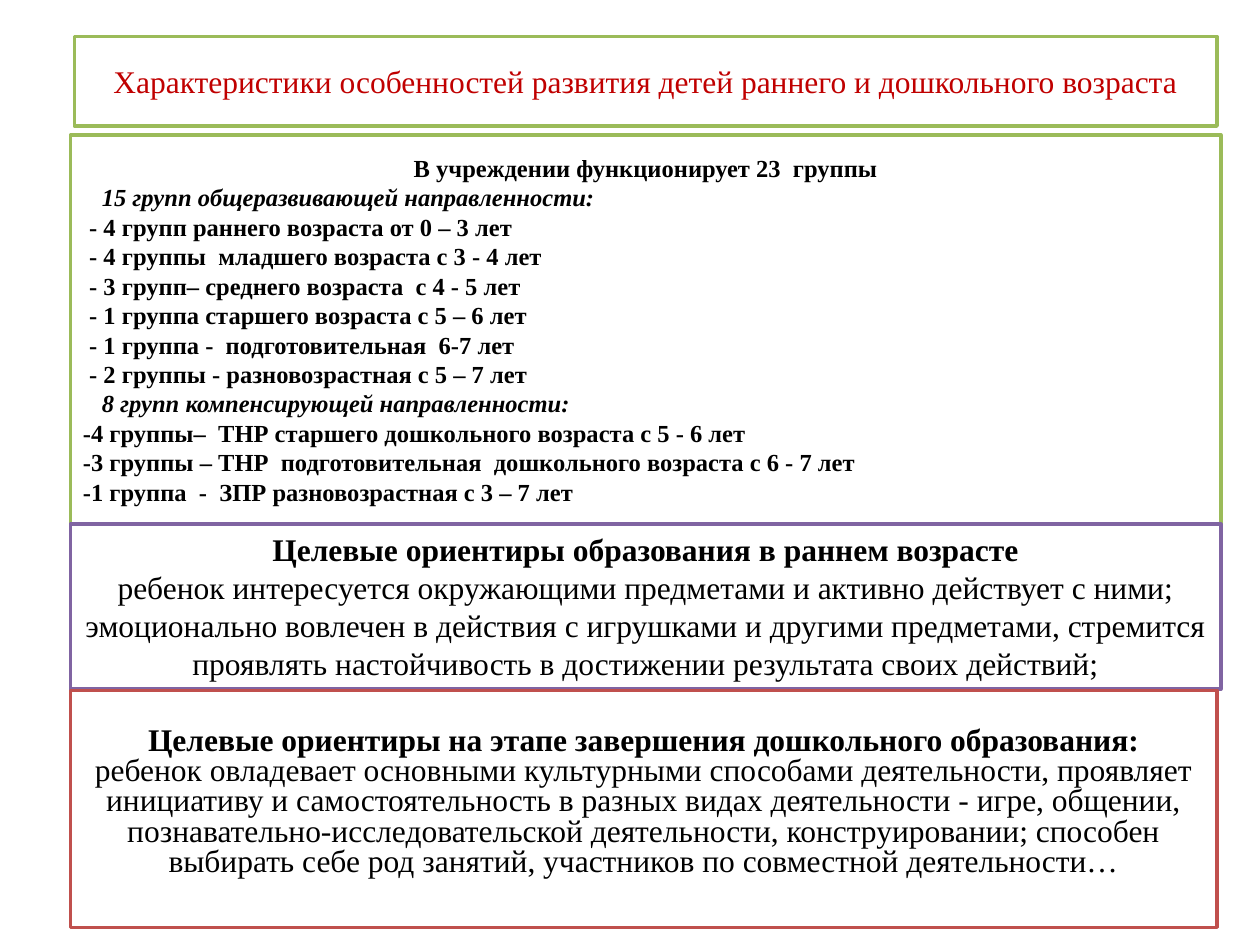
from dataclasses import dataclass

from pptx import Presentation
from pptx.dml.color import RGBColor
from pptx.enum.shapes import MSO_SHAPE
from pptx.enum.text import MSO_ANCHOR, PP_ALIGN
from pptx.util import Inches, Pt

RECTANGLE = MSO_SHAPE.RECTANGLE
TOP, MIDDLE = MSO_ANCHOR.TOP, MSO_ANCHOR.MIDDLE
LEFT, CENTER = PP_ALIGN.LEFT, PP_ALIGN.CENTER

SLIDE_W, SLIDE_H = 10, 7.5


@dataclass(frozen=True)
class Theme:
    font: str = "Times New Roman"
    paper: str = "FFFFFF"
    ink: str = "000000"
    title: str = "C00000"
    green: str = "9BBB59"
    purple: str = "8064A2"
    red: str = "C0504D"
    large: int = 18
    small: int = 14
    border: int = 2


THEME = Theme()

HEADING = "Характеристики особенностей развития детей раннего и дошкольного возраста"
GROUPS_TOTAL = "В учреждении функционирует 23  группы"
# Each section: heading, indent of its items in inches, items
GROUP_SECTIONS = [
    ("15 групп общеразвивающей направленности:", 0.05, [
        "- 4 групп раннего возраста от 0 – 3 лет",
        "- 4 группы  младшего возраста с 3 - 4 лет",
        "- 3 групп– среднего возраста  с 4 - 5 лет",
        "- 1 группа старшего возраста с 5 – 6 лет",
        "- 1 группа -  подготовительная  6-7 лет",
        "- 2 группы - разновозрастная с 5 – 7 лет",
    ]),
    ("8 групп компенсирующей направленности:", 0, [
        "-4 группы–  ТНР старшего дошкольного возраста с 5 - 6 лет",
        "-3 группы – ТНР  подготовительная  дошкольного возраста с 6 - 7 лет",
        "-1 группа  -  ЗПР разновозрастная с 3 – 7 лет",
    ]),
]
EARLY_AGE = (
    "Целевые ориентиры образования в раннем возрасте",
    "ребенок интересуется окружающими предметами и активно действует с ними; "
    "эмоционально вовлечен в действия с игрушками и другими предметами, "
    "стремится проявлять настойчивость в достижении результата своих действий;",
)
PRESCHOOL_END = (
    "Целевые ориентиры на этапе завершения дошкольного образования:",
    "ребенок овладевает основными культурными способами деятельности, "
    "проявляет инициативу и самостоятельность в разных видах деятельности - "
    "игре, общении, познавательно-исследовательской деятельности, "
    "конструировании; способен выбирать себе род занятий, участников по "
    "совместной деятельности…",
)


def add_panel(slide, box, border, anchor=MIDDLE):
    """Draw a bordered panel in box (left, top, width, height) and return its text frame."""
    panel = slide.shapes.add_shape(RECTANGLE, *(Inches(side) for side in box))
    panel.shadow.inherit = False
    panel.fill.solid()
    panel.fill.fore_color.rgb = RGBColor.from_string(THEME.paper)
    panel.line.color.rgb = RGBColor.from_string(border)
    panel.line.width = Pt(THEME.border)
    frame = panel.text_frame
    frame.word_wrap = True
    frame.vertical_anchor = anchor
    return frame


def add_line(frame, text, size, color=THEME.ink, bold=False, italic=False,
             align=CENTER, indent=0, spacing=None):
    """Fill the empty first paragraph, or append a new one."""
    paragraph = frame.add_paragraph() if frame.text else frame.paragraphs[0]
    paragraph.text = text
    paragraph.alignment = align
    paragraph.line_spacing = spacing
    if indent:
        properties = paragraph._p.get_or_add_pPr()
        properties.set("marL", str(Inches(indent)))
        properties.set("indent", "0")
    font = paragraph.runs[0].font
    font.name, font.size = THEME.font, Pt(size)
    font.bold, font.italic = bold, italic
    font.color.rgb = RGBColor.from_string(color)


def add_heading(slide, box):
    frame = add_panel(slide, box, THEME.green)
    add_line(frame, HEADING, THEME.large, THEME.title)


def add_groups(slide, box):
    frame = add_panel(slide, box, THEME.green)
    add_line(frame, GROUPS_TOTAL, THEME.small, bold=True)
    for section, item_indent, items in GROUP_SECTIONS:
        add_line(frame, section, THEME.small, bold=True, italic=True,
                 align=LEFT, indent=0.15)
        for item in items:
            add_line(frame, item, THEME.small, bold=True, align=LEFT,
                     indent=item_indent)


def add_targets(slide, box, border, targets, inset_top=0.05, spacing=None):
    frame = add_panel(slide, box, border, TOP)
    frame.margin_top = Inches(inset_top)
    title, description = targets
    add_line(frame, title, THEME.large, bold=True, spacing=spacing)
    add_line(frame, description, THEME.large, spacing=spacing)


def main():
    deck = Presentation()
    deck.slide_width, deck.slide_height = Inches(SLIDE_W), Inches(SLIDE_H)
    slide = deck.slides.add_slide(deck.slide_layouts[6])

    left, width = 0.56, 9.13
    groups_top, early_top, end_top, bottom = 1.07, 4.16, 5.48, 7.36
    add_groups(slide, (left, groups_top, width, early_top - groups_top))
    add_heading(slide, (left + 0.03, 0.29, width - 0.06, 0.71))
    add_targets(slide, (left, early_top, width, end_top - early_top - 0.01),
                THEME.purple, EARLY_AGE)
    add_targets(slide, (left, end_top, width - 0.03, bottom - end_top),
                THEME.red, PRESCHOOL_END, inset_top=0.29, spacing=0.8)

    deck.save("out.pptx")


if __name__ == "__main__":
    main()
